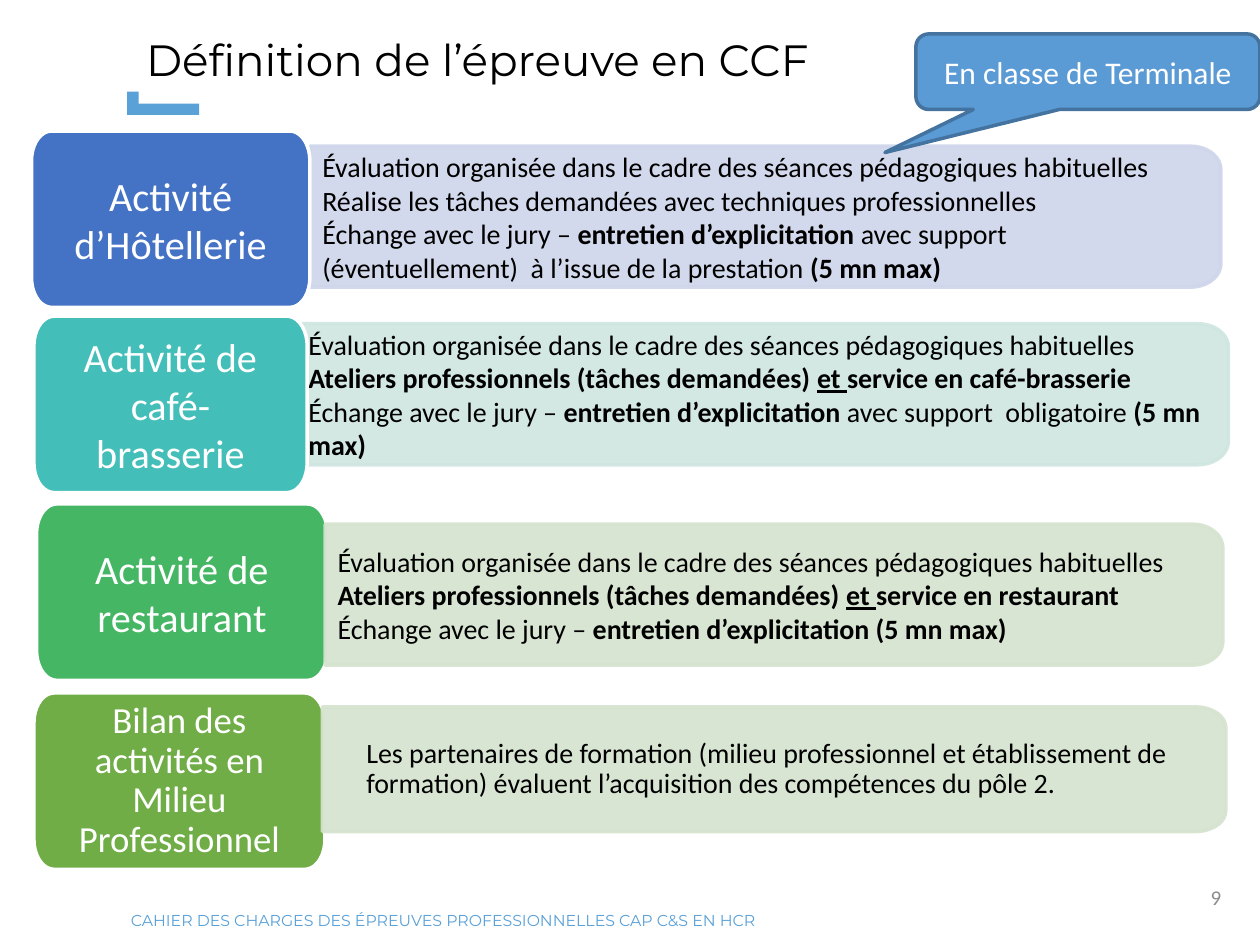
from dataclasses import dataclass
from math import cos, radians, sin

from lxml import etree
from pptx import Presentation
from pptx.dml.color import RGBColor
from pptx.enum import shapes, text
from pptx.oxml import ns
from pptx.util import Pt


@dataclass(frozen=True)
class Theme:
    body: str = "Calibri"
    head: str = "Montserrat"
    black: str = "000000"
    white: str = "FFFFFF"
    gray: str = "8C8C8C"
    accent: str = "5AA1D8"
    call: str = "5B9BD5"
    edge: str = "43739E"
    title: int = 25
    label: int = 23
    small: int = 21
    note: int = 18
    text: int = 16
    num: int = 12
    foot: int = 9


T = Theme()
MID = text.MSO_ANCHOR.MIDDLE
CENTER = text.PP_ALIGN.CENTER
BOLD, UNDER = "b", "bu"

USUAL = [("Évaluation organisée dans le cadre des séances pédagogiques habituelles", "")]
TALK = ("Échange avec le jury – ", "")
ASK = ("entretien d’explicitation ", BOLD)
LIMIT = ("(5 mn max)", BOLD)


def shops(place):
    return [("Ateliers professionnels (tâches demandées) ", BOLD),
            ("et ", UNDER), (f"service en {place}", BOLD)]


# Each row: label text, colour, size, box; panel colour, box, paragraphs; label on top
ROWS = [
    ("Activité d’Hôtellerie", "4472C4", T.label, (18, 74.9, 159.1, 100.8),
     "CFD5EA", (177.1, 83.5, 520.6, 80.6),
     [USUAL,
      [("Réalise les tâches demandées avec techniques professionnelles", "")],
      [TALK, ASK,
       ("avec support (éventuellement)  à l’issue de la prestation ", ""), LIMIT]],
     True),
    ("Activité de café-brasserie", "43BEB9", T.label, (19.4, 180.7, 156.2, 100.8),
     "CFE6E0", (169.2, 185, 532.8, 80.6),
     [USUAL, shops("café-brasserie"),
      [TALK, ASK, ("avec support  obligatoire ", ""), LIMIT]],
     True),
    ("Activité de restaurant", "45B664", T.label, (20.9, 288, 166.3, 100.8),
     "D5E3CF", (185.8, 299.5, 513, 80.6),
     [USUAL, shops("restaurant"), [TALK, ASK, LIMIT]],
     False),
    ("Bilan des activités en Milieu Professionnel", "70AD47", T.small,
     (19.4, 396, 166.3, 100.8),
     "D5E3CF", (184.3, 403.9, 516.2, 71.3),
     [[("Les partenaires de formation (milieu professionnel et établissement de "
        "formation) évaluent l’acquisition des compétences du pôle 2.", "")]],
     False),
]


def rgb(code):
    return RGBColor.from_string(code)


def pts(box):
    return [Pt(v) for v in box]


def font(para, size, color, name=T.body):
    para.font.size, para.font.name = Pt(size), name
    para.font.color.rgb = rgb(color)


def paint(shape, fill, line=None, width=2):
    shape.shadow.inherit = False
    shape.fill.solid()
    shape.fill.fore_color.rgb = rgb(fill)
    if line:
        shape.line.color.rgb = rgb(line)
        shape.line.width = Pt(width)
    else:
        shape.line.fill.background()


def fade(shape, percent):
    for color in shape._element.spPr.iter(ns.qn("a:srgbClr")):
        etree.SubElement(color, ns.qn("a:alpha"), val=str(percent * 1000))


def frame(shape, inset=(7.2, 3.6, 7.2, 3.6), anchor=MID):
    box = shape.text_frame
    box.word_wrap = True
    box.vertical_anchor = anchor
    (box.margin_left, box.margin_top,
     box.margin_right, box.margin_bottom) = pts(inset)
    return box


def write(shape, words, size, color, name=T.body, align=None, **kw):
    para = frame(shape, **kw).paragraphs[0]
    para.text = words
    para.alignment = align
    font(para, size, color, name)
    return para


def block(slide, box, rx, ry, left):
    """Outline with rounded right corners, and left ones too if asked."""
    x, y, w, h = box
    corners = [(x + w, y, -1, 1, 270), (x + w, y + h, -1, -1, 0),
               (x, y + h, 1, -1, 90), (x, y, 1, 1, 180)]
    dots = []
    for cx, cy, dx, dy, start in corners:
        if dx > 0 and not left:
            dots.append((cx, cy))
            continue
        for step in range(0, 91, 10):
            turn = radians(start + step)
            dots.append((cx + dx * rx + rx * cos(turn),
                         cy + dy * ry + ry * sin(turn)))
    dots = [(Pt(a), Pt(b)) for a, b in dots]
    path = slide.shapes.build_freeform(*dots[0])
    path.add_line_segments(dots[1:], close=True)
    return path.convert_to_shape()


def label(slide, words, color, size, box):
    shape = block(slide, box, 11.5, 17, True)
    paint(shape, color, T.white)
    para = write(shape, words, size, T.white, align=CENTER,
                 inset=(21, 12.5, 21, 12.5))
    if size == T.small:
        para.line_spacing = 0.9


def panel(slide, color, box, paras):
    shape = block(slide, box, 17.3, box[3] / 6, False)
    paint(shape, color, color)
    fade(shape, 90)
    body = frame(shape, (7.2, 7.2, 10.1, 7.2))
    for i, runs in enumerate(paras):
        para = body.add_paragraph() if i else body.paragraphs[0]
        para.alignment = text.PP_ALIGN.LEFT
        if len(paras) == 1:
            para.line_spacing = 0.9
            para._p.get_or_add_pPr().set("marL", str(Pt(18)))
        font(para, T.text, T.black)
        for words, style in runs:
            run = para.add_run()
            run.text = words
            if "b" in style:
                run.font.bold = True
            if "u" in style:
                run.font.underline = True


def heading(slide):
    title = slide.shapes.title
    title.left, title.top, title.width, title.height = pts((76.3, 18.7, 620.6, 67))
    para = write(title, "Définition de l’épreuve en CCF", T.title, T.black, T.head,
                 text.PP_ALIGN.LEFT, anchor=text.MSO_ANCHOR.TOP)
    para.line_spacing = 0.9
    # Corner mark under the title
    mark = slide.shapes.add_group_shape()
    for box in ((72.7, 52.3, 6.5, 13.4), (75.6, 59.2, 38.2, 6.5)):
        bar = mark.shapes.add_shape(shapes.MSO_SHAPE.RECTANGLE, *pts(box))
        paint(bar, T.accent)


def footer(slide):
    num = slide.shapes.add_textbox(*pts((543, 498.2, 162, 28.8)))
    write(num, "9", T.num, T.gray, align=text.PP_ALIGN.RIGHT)
    foot = slide.shapes.add_textbox(*pts((67.7, 511.2, 444.2, 28.8)))
    write(foot, "CAHIER DES CHARGES DES ÉPREUVES PROFESSIONNELLES CAP C&S EN HCR",
          T.foot, T.accent, T.head)


def callout(slide):
    shape = slide.shapes.add_shape(shapes.MSO_SHAPE.ROUNDED_RECTANGULAR_CALLOUT,
                                   *pts((523.4, 19.4, 196.6, 43.2)))
    for i, value in enumerate((-0.59, 1.07, 0.17)):
        shape.adjustments[i] = value
    paint(shape, T.call, T.edge)
    write(shape, "En classe de Terminale", T.note, T.white, align=CENTER)


def main():
    deck = Presentation()
    deck.slide_width, deck.slide_height = Pt(720), Pt(540)
    slide = deck.slides.add_slide(deck.slide_layouts[5])
    heading(slide)
    footer(slide)
    # Exam rows
    for words, color, size, spot, tint, box, paras, front in ROWS:
        if not front:
            label(slide, words, color, size, spot)
        panel(slide, tint, box, paras)
        if front:
            label(slide, words, color, size, spot)
    callout(slide)
    deck.save("out.pptx")


if __name__ == "__main__":
    main()
